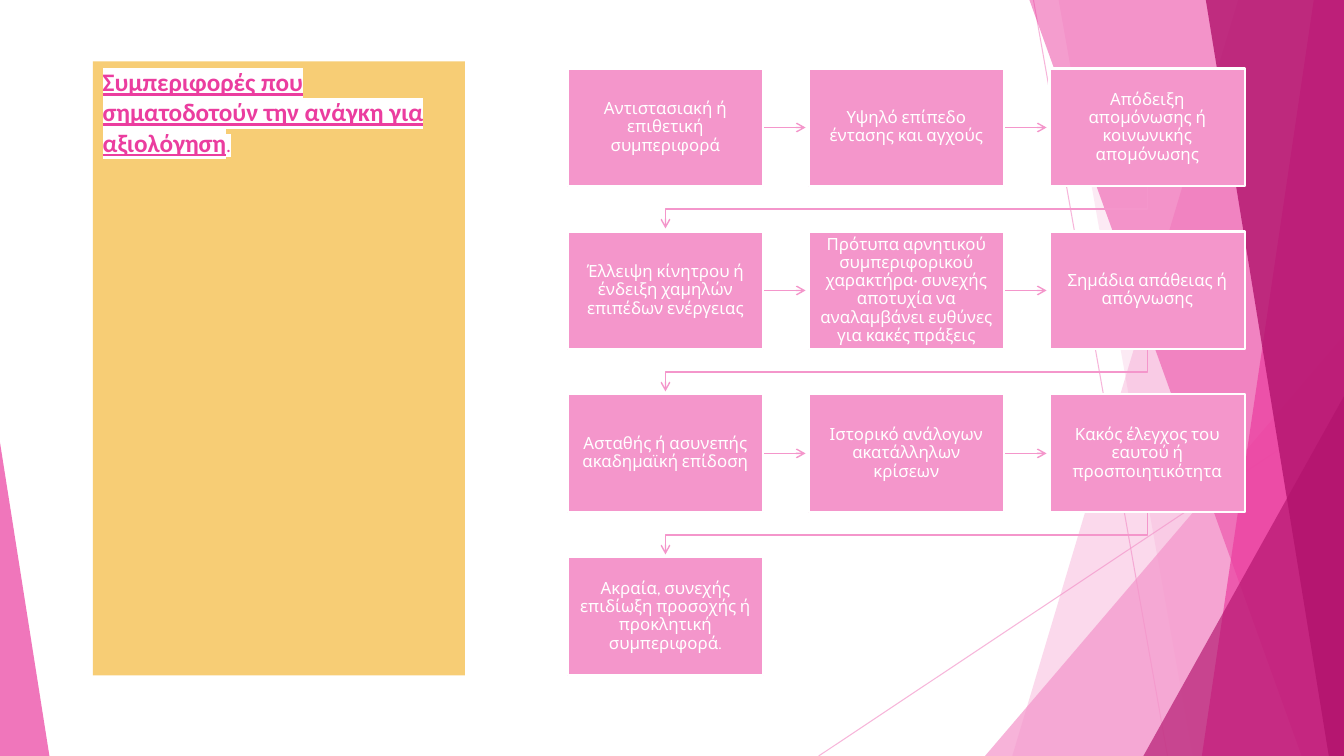
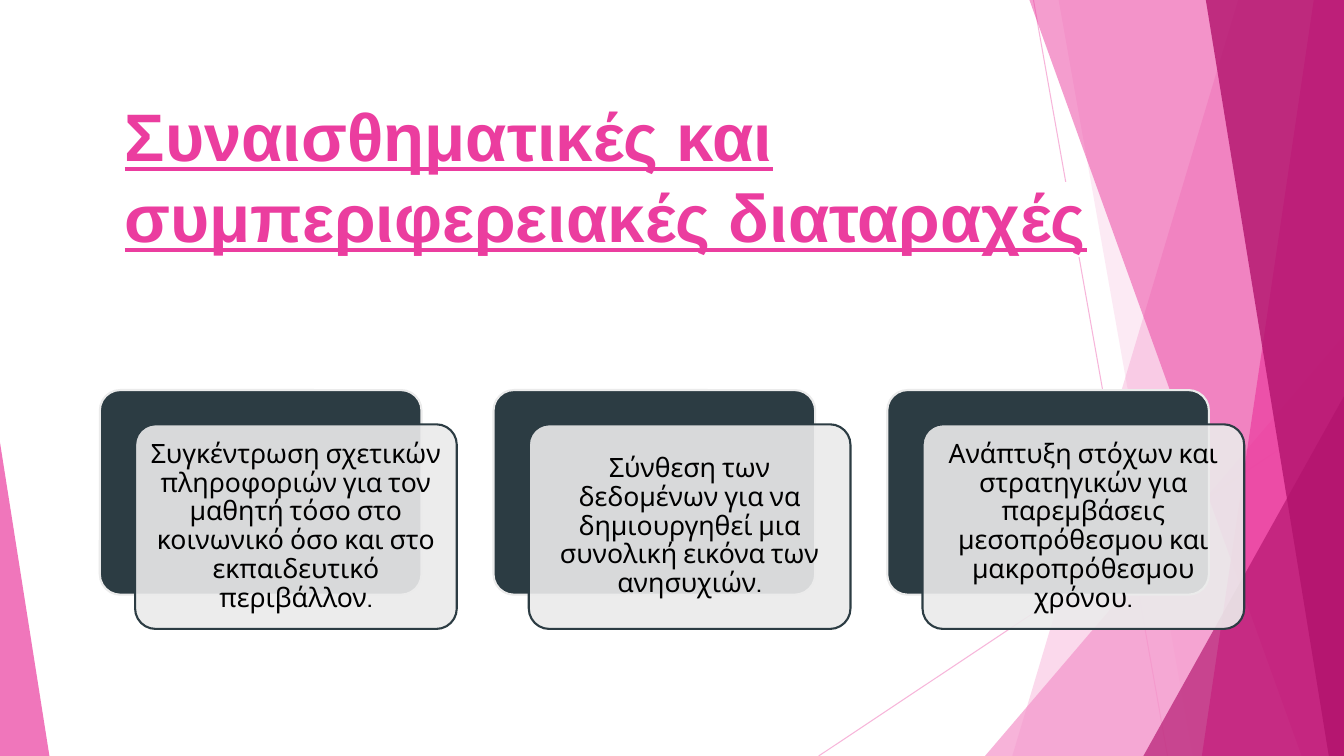
from lxml import etree
from pptx import Presentation
from pptx.dml.color import RGBColor
from pptx.enum.shapes import MSO_CONNECTOR, MSO_SHAPE
from pptx.enum.text import MSO_ANCHOR, PP_ALIGN
from pptx.oxml.ns import qn
from pptx.util import Inches, Pt

RECTANGLE = MSO_SHAPE.RECTANGLE
ROUNDED = MSO_SHAPE.ROUNDED_RECTANGLE
TRIANGLE = MSO_SHAPE.ISOSCELES_TRIANGLE
STRAIGHT = MSO_CONNECTOR.STRAIGHT
TOP, MIDDLE = MSO_ANCHOR.TOP, MSO_ANCHOR.MIDDLE
CENTER = PP_ALIGN.CENTER

WHITE = RGBColor(0xFF, 0xFF, 0xFF)
BLACK = RGBColor(0x00, 0x00, 0x00)
LIGHT_PINK = RGBColor(0xF4, 0x96, 0xCB)
PINK = RGBColor(0xEB, 0x3D, 0x9F)
MAGENTA = RGBColor(0xB2, 0x13, 0x6D)
SAND = RGBColor(0xF7, 0xCD, 0x75)
SLATE = RGBColor(0x2C, 0x3C, 0x43)
MIST = RGBColor(0xEB, 0xEB, 0xEB)

WIDTH, HEIGHT = 13.33, 7.5
BODY_FONT = "Cabin"

RAYS = [((10.25, 0), (11.58, HEIGHT)), ((WIDTH, 4.03), (8.12, HEIGHT))]
# Each facet: kind, geometry, colour, opacity
FACETS = [
    ("band", (12.28, 10.04), LIGHT_PINK, 36),
    ("band", (10.5, 11.83), LIGHT_PINK, 20),
    ("corner", (9.77, 3.33, 3.56, 4.17, 1), LIGHT_PINK, 72),
    ("band", (10.21, 12.91), PINK, 50),
    ("band", (13.03, 11.92), PINK, 70),
    ("band", (11.96, 13.18), MAGENTA, 80),
    ("corner", (11.34, 3.93, 1.99, 3.57, 1), MAGENTA, 66),
    ("corner", (0, 4.39, 0.49, 3.11, 0), PINK, 70),
]

BEHAVIOURS = [
    "Αντιστασιακή ή επιθετική συμπεριφορά",
    "Υψηλό επίπεδο έντασης και αγχούς",
    "Απόδειξη απομόνωσης ή κοινωνικής απομόνωσης",
    "Έλλειψη κίνητρου ή ένδειξη χαμηλών επιπέδων ενέργειας",
    "Πρότυπα αρνητικού συμπεριφορικού χαρακτήρα· συνεχής αποτυχία να "
    "αναλαμβάνει ευθύνες για κακές πράξεις",
    "Σημάδια απάθειας ή απόγνωσης",
    "Ασταθής ή ασυνεπής ακαδημαϊκή επίδοση",
    "Ιστορικό ανάλογων ακατάλληλων κρίσεων",
    "Κακός έλεγχος του εαυτού ή προσποιητικότητα",
    "Ακραία, συνεχής επιδίωξη προσοχής ή προκλητική συμπεριφορά.",
]
STEPS = [
    "Συγκέντρωση σχετικών πληροφοριών για τον μαθητή τόσο στο κοινωνικό όσο "
    "και στο εκπαιδευτικό περιβάλλον.",
    "Σύνθεση των δεδομένων για να δημιουργηθεί μια συνολική εικόνα των ανησυχιών.",
    "Ανάπτυξη στόχων και στρατηγικών για παρεμβάσεις μεσοπρόθεσμου και "
    "μακροπρόθεσμου χρόνου.",
]


def set_opacity(fill_parent, percent):
    """Make the solid fill found below an element partly transparent."""
    colour = fill_parent.find(qn("a:solidFill"))[0]
    etree.SubElement(colour, qn("a:alpha")).set("val", str(percent * 1000))


def paint(shape, fill=None, line=None, weight=1.5, opacity=100):
    """Give a shape its fill and outline, without a shadow."""
    shape.shadow.inherit = False
    if fill is None:
        shape.fill.background()
    else:
        shape.fill.solid()
        shape.fill.fore_color.rgb = fill
        if opacity < 100:
            set_opacity(shape._element.spPr, opacity)
    if line is None:
        shape.line.fill.background()
    else:
        shape.line.color.rgb = line
        shape.line.width = Pt(weight)


def add_block(slide, kind, box, fill, **style):
    """Add a painted preset shape in a box given in inches."""
    block = slide.shapes.add_shape(kind, *map(Inches, box))
    paint(block, fill, **style)
    return block


def add_outline(slide, points, close):
    """Add a freeform through points given in inches."""
    corners = [(Inches(x), Inches(y)) for x, y in points]
    builder = slide.shapes.build_freeform(*corners[0])
    builder.add_line_segments(corners[1:], close=close)
    return builder.convert_to_shape()


def add_line(slide, start, end, weight):
    """Add a straight light pink line without a shadow."""
    line = slide.shapes.add_connector(STRAIGHT, *map(Inches, (*start, *end)))
    line.line.color.rgb = LIGHT_PINK
    line.line.width = Pt(weight)
    etree.SubElement(line._element.spPr, qn("a:effectLst"))
    return line


def add_arrowhead(line):
    """Put an open arrowhead at the end of a line."""
    etree.SubElement(line.line._get_or_add_ln(), qn("a:tailEnd")).set("type", "arrow")


def write_label(shape, text, size, colour, inset):
    """Centre a wrapped body text inside a shape."""
    frame = shape.text_frame
    frame.word_wrap = True
    frame.vertical_anchor = MIDDLE
    frame.margin_left = frame.margin_right = Inches(inset)
    frame.margin_top = frame.margin_bottom = Inches(inset)
    paragraph = frame.paragraphs[0]
    paragraph.text = text
    paragraph.alignment = CENTER
    paragraph.line_spacing = 0.9
    paragraph.font.name = BODY_FONT
    paragraph.font.size = Pt(size)
    paragraph.font.color.rgb = colour


def add_title(slide, box, parts, font_name, anchor, fill=None):
    """Add a highlighted title; each part is text, size and whether it is stressed."""
    title = add_block(slide, RECTANGLE, box, fill)
    frame = title.text_frame
    frame.word_wrap = True
    frame.vertical_anchor = anchor
    paragraph = frame.paragraphs[0]
    paragraph.alignment = PP_ALIGN.LEFT
    for text, size, stressed in parts:
        run = paragraph.add_run()
        run.text = text
        run.font.size = Pt(size)
        run.font.bold = run.font.underline = stressed
        run.font.color.rgb = PINK
        highlight = etree.Element(qn("a:highlight"))
        etree.SubElement(highlight, qn("a:srgbClr")).set("val", str(WHITE))
        run.font._element.find(qn("a:solidFill")).addnext(highlight)
        run.font.name = font_name


def add_backdrop(slide):
    """Draw the rays and translucent facets shared by all slides."""
    for start, end in RAYS:
        ray = add_line(slide, start, end, 0.75)
        set_opacity(ray.line._get_or_add_ln(), 70)
    for kind, geometry, colour, opacity in FACETS:
        if kind == "band":
            top_x, bottom_x = geometry
            edges = [(top_x, 0), (WIDTH, 0), (WIDTH, HEIGHT), (bottom_x, HEIGHT)]
            paint(add_outline(slide, edges, True), colour, opacity=opacity)
        else:
            *box, apex = geometry
            corner = add_block(slide, TRIANGLE, box, colour, opacity=opacity)
            corner.adjustments[0] = apex


def add_behaviour_flow(slide, box, columns=3):
    """Lay the behaviours out in rows, joined by arrows in reading order."""
    left, top, width, height = box
    cell_w, cell_h, gap = 1.94, 1.17, 0.03
    rows = -(-len(BEHAVIOURS) // columns)
    pitch_x = (width - cell_w) / (columns - 1)
    pitch_y = (height - cell_h) / (rows - 1)
    for index, behaviour in enumerate(BEHAVIOURS):
        row, column = divmod(index, columns)
        x, y = left + column * pitch_x, top + row * pitch_y
        if index < len(BEHAVIOURS) - 1:
            if column < columns - 1:
                middle = y + cell_h / 2
                arrow = add_line(slide, (x + cell_w, middle),
                                 (x + pitch_x - gap, middle), 1)
            else:
                start_x, end_x = x + cell_w / 2, left + cell_w / 2
                bottom, turn = y + cell_h, y + (cell_h + pitch_y) / 2
                arrow = add_outline(slide, [(start_x, bottom), (start_x, turn),
                                            (end_x, turn), (end_x, y + pitch_y - gap)], False)
                paint(arrow, line=LIGHT_PINK, weight=1)
            add_arrowhead(arrow)
        cell = add_block(slide, RECTANGLE, (x, y, cell_w, cell_h), LIGHT_PINK, line=WHITE)
        write_label(cell, behaviour, 12, WHITE, 0.1)


def add_step_cards(slide, box):
    """Spread the steps over a row of cards, each in front of a dark plate."""
    left, top, width, height = box
    shift_x, shift_y, card_w = 0.35, 0.34, 3.19
    card_h = height - shift_y
    pitch = (width - card_w - shift_x) / (len(STEPS) - 1)
    for index, step in enumerate(STEPS):
        x = left + index * pitch
        plate = add_block(slide, ROUNDED, (x, top, card_w, card_h), SLATE, line=MIST)
        card = add_block(slide, ROUNDED, (x + shift_x, top + shift_y, card_w, card_h),
                         MIST, line=SLATE, opacity=90)
        plate.adjustments[0] = card.adjustments[0] = 0.1
        write_label(card, step, 19, BLACK, 0.08)


def build_behaviours_slide(slide):
    """Fill the slide on behaviours that call for an assessment."""
    add_backdrop(slide)
    heading = [("Συμπεριφορές που σηματοδοτούν την ανάγκη για αξιολόγηση", 18, True),
               (".", 14, False)]
    add_title(slide, (0.92, 0.61, 3.69, 6.09), heading, "Calibri", TOP, SAND)
    add_behaviour_flow(slide, (5.63, 0.68, 6.72, 6.02))


def build_disorders_slide(slide):
    """Fill the slide on emotional and behavioural disorders."""
    add_backdrop(slide)
    heading = [("Συναισθηματικές και συμπεριφερειακές διαταραχές", 48, True)]
    add_title(slide, (1.14, 0.89, 11.13, 1.7), heading, "Arial", MIDDLE)
    add_step_cards(slide, (0.99, 3.87, 11.35, 2.37))


def main():
    """Build and save the presentation."""
    deck = Presentation()
    deck.slide_width, deck.slide_height = Inches(WIDTH), Inches(HEIGHT)
    blank = deck.slide_layouts[6]
    for build in (build_behaviours_slide, build_disorders_slide):
        build(deck.slides.add_slide(blank))
    deck.save("out.pptx")


if __name__ == "__main__":
    main()
